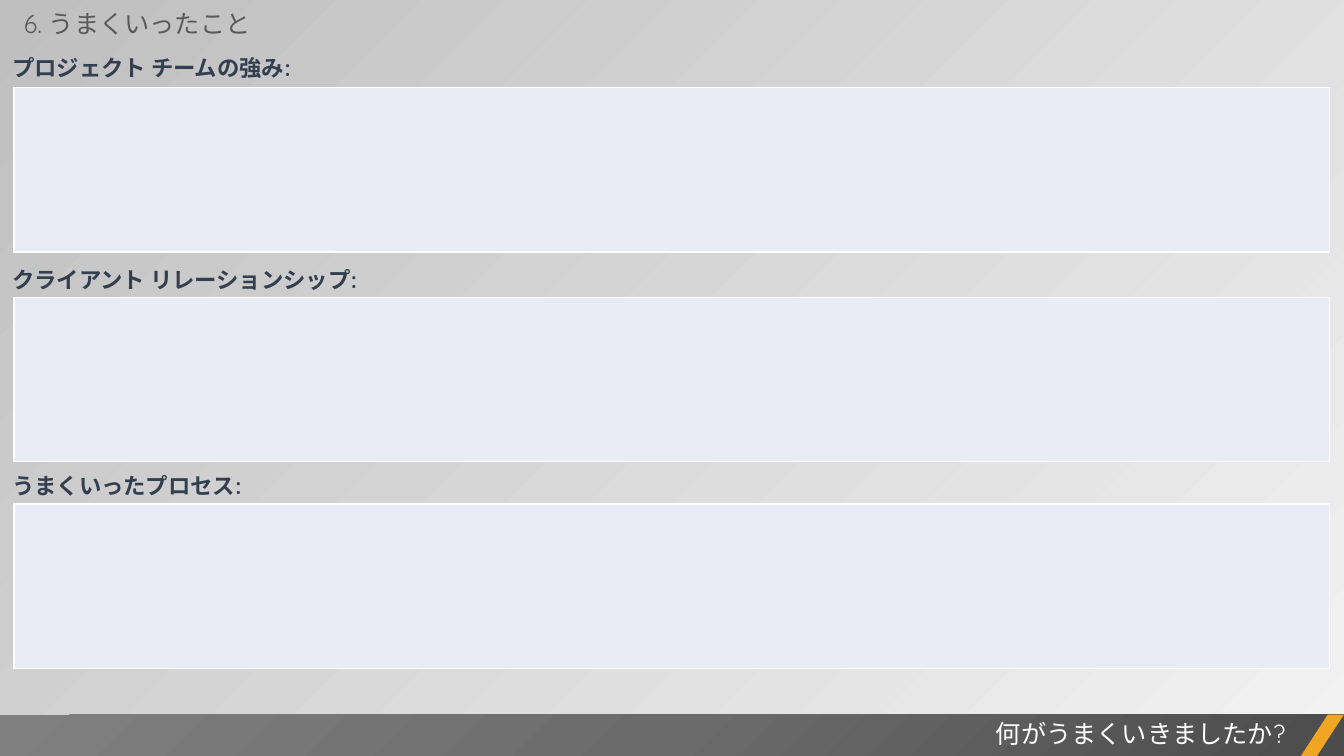
from copy import deepcopy

from lxml.etree import SubElement
from pptx import Presentation
from pptx.dml.color import RGBColor as RGB
from pptx.enum.shapes import MSO_SHAPE as Shape
from pptx.enum.text import MSO_AUTO_SIZE as AutoSize, PP_ALIGN as Align
from pptx.oxml.ns import qn
from pptx.util import Pt

COLORS = {
    "back_light": "F2F2F2", "back_dark": "BFBFBF",
    "panel": "E9EBF5", "white": "FFFFFF",
    "heading": "333F50", "title": "595959", "accent": "F0A622",
    "bar_dark": "4C4C4C", "bar_middle": "6B6B6B", "bar_light": "808080",
}
FONT = "Quicksand"

presentation = Presentation()
presentation.slide_width, presentation.slide_height = Pt(960), Pt(540)
slide = presentation.slides.add_slide(presentation.slide_layouts[6])


def set_stops(fill, names):
    for index, (stop, name) in enumerate(zip(fill.gradient_stops, names)):
        stop.position = index / (len(names) - 1)
        stop.color.rgb = RGB.from_string(COLORS[name])


def add_text(text, left, top, width, size, color, align=Align.LEFT):
    box = slide.shapes.add_textbox(Pt(left), Pt(top), Pt(width), Pt(29))
    frame = box.text_frame
    frame.word_wrap = True
    frame.auto_size = AutoSize.SHAPE_TO_FIT_TEXT
    paragraph = frame.paragraphs[0]
    paragraph.text = text
    paragraph.alignment = align
    paragraph.font.name = FONT
    paragraph.font.size = Pt(size)
    paragraph.font.color.rgb = RGB.from_string(COLORS[color])
    return frame


# Background
background = slide.background.fill
background.gradient()
background.gradient_angle = 135
set_stops(background, ["back_light", "back_dark"])

# Headed answer panels: heading, heading top, panel top, line spacing
sections = [
    ("プロジェクト チームの強み:", 32.4, 62.6, Pt(21.5)),
    ("クライアント リレーションシップ:", 183.6, 212.4, Pt(21.5)),
    ("うまくいったプロセス:", 329, 360, 1.2),
]
for heading, heading_top, panel_top, line_spacing in sections:
    table = slide.shapes.add_table(
        1, 1, Pt(10), Pt(panel_top), Pt(939.6), Pt(117.4)).table
    cell = table.cell(0, 0)
    properties = cell._tc.get_or_add_tcPr()
    for side in ("lnL", "lnR", "lnT", "lnB"):
        border = SubElement(properties, qn(f"a:{side}"), w=str(Pt(1)))
        line_fill = SubElement(border, qn("a:solidFill"))
        SubElement(line_fill, qn("a:srgbClr"), val=COLORS["white"])
    cell.fill.solid()
    cell.fill.fore_color.rgb = RGB.from_string(COLORS["panel"])

    frame = add_text(heading, 0, heading_top, 549.4, 16, "heading")
    frame.margin_left = frame.margin_right = Pt(8.64)
    frame.margin_top = frame.margin_bottom = Pt(4.32)
    paragraph = frame.paragraphs[0]
    paragraph.font.bold = True
    paragraph.line_spacing = line_spacing
    paragraph.space_before = Pt(3)

# Footer bar, shaded outwards from its bottom right corner
bar = slide.shapes.add_shape(
    Shape.RECTANGLE, 0, Pt(510.4), Pt(960), Pt(30))
bar.shadow.inherit = False
bar.line.fill.background()
bar.fill.gradient()
gradient = bar._element.spPr.find(qn("a:gradFill"))
stops = gradient.find(qn("a:gsLst"))
stops.append(deepcopy(stops[0]))
set_stops(bar.fill, ["bar_dark", "bar_middle", "bar_light"])
gradient.remove(gradient.find(qn("a:lin")))
shading = SubElement(gradient, qn("a:path"), {"path": "circle"})
SubElement(shading, qn("a:fillToRect"), l="100000", t="100000")

add_text("何がうまくいきましたか?", 378, 509.8, 547.2, 18, "white", Align.RIGHT)

# Accent slash
slash = slide.shapes.add_shape(
    Shape.PARALLELOGRAM, Pt(929), Pt(510.4), Pt(31), Pt(30))
slash.adjustments[0] = 0.65
slash.shadow.inherit = False
slash.line.fill.background()
slash.fill.solid()
slash.fill.fore_color.rgb = RGB.from_string(COLORS["accent"])

# Title
add_text("6. うまくいったこと", 10, 2.2, 382.3, 18, "title")

presentation.save("out.pptx")
